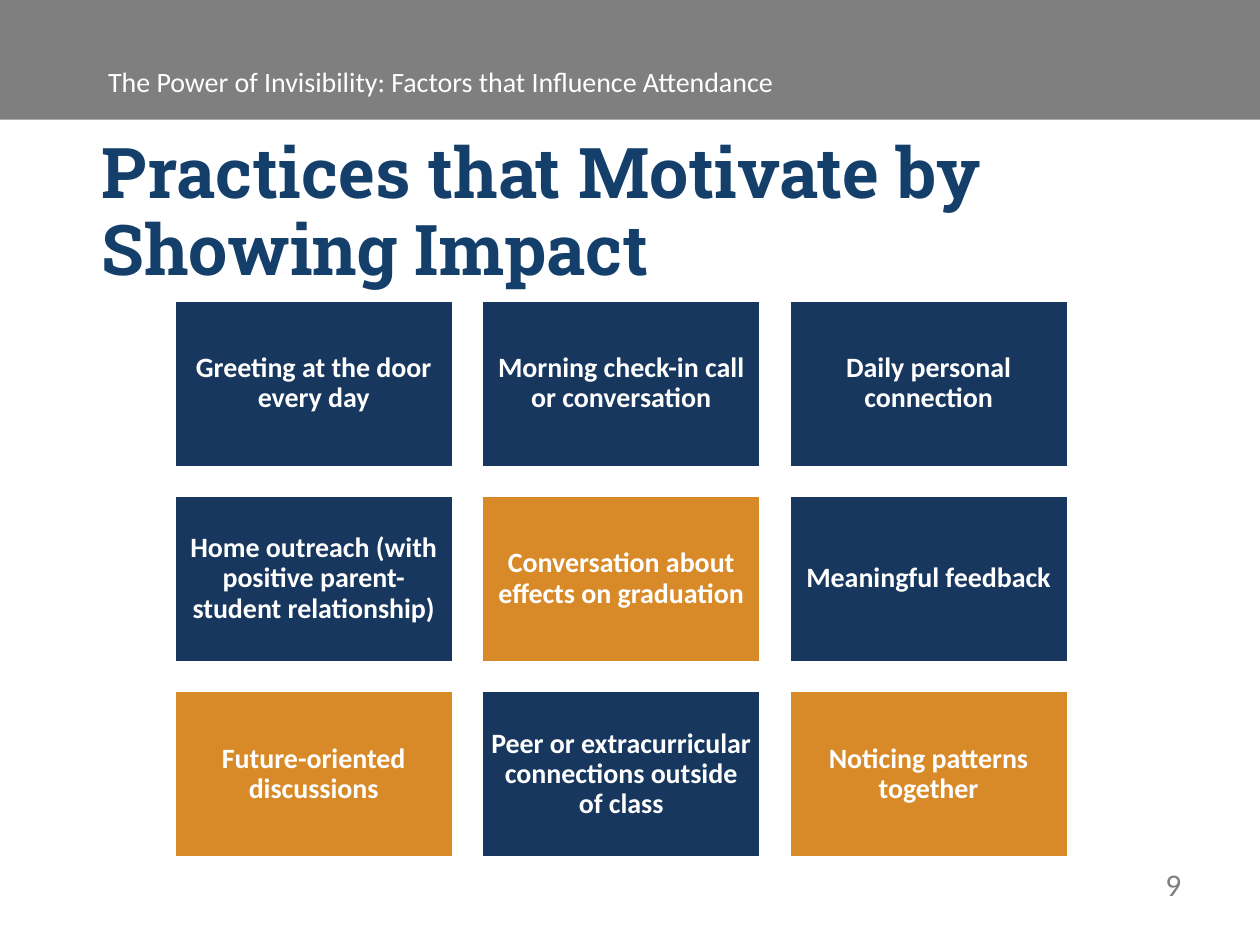
from pptx import Presentation
from pptx.dml.color import RGBColor
from pptx.enum.shapes import MSO_SHAPE
from pptx.enum.text import MSO_ANCHOR, PP_ALIGN
from pptx.util import Inches, Pt

RECTANGLE = MSO_SHAPE.RECTANGLE
MIDDLE = MSO_ANCHOR.MIDDLE
CENTER = PP_ALIGN.CENTER

NAVY, ORANGE, GREY, WHITE, TITLE_BLUE = "17375E", "D88A29", "7F7F7F", "FFFFFF", "143F6A"

PRACTICES = [
    ("Greeting at the door every day", NAVY),
    ("Morning check-in call or conversation", NAVY),
    ("Daily personal connection", NAVY),
    ("Home outreach (with positive parent-student relationship)", NAVY),
    ("Conversation about effects on graduation", ORANGE),
    ("Meaningful feedback", NAVY),
    ("Future-oriented discussions", ORANGE),
    ("Peer or extracurricular connections outside of class", NAVY),
    ("Noticing patterns together", ORANGE),
]
COLUMNS = 3
GRID_LEFT, GRID_TOP = 1.38, 2.38
TILE_WIDTH, TILE_HEIGHT = 2.22, 1.33
GAP = 0.22
TILE_INSET = 0.07


def color(hex_code):
    return RGBColor.from_string(hex_code)


class SlideBuilder:
    body_font = "Calibri"
    title_font = "Roboto Slab"

    def __init__(self, page):
        self.page = page

    def style(self, para, size, hex_code, font=None, bold=False):
        para.font.name = font or self.body_font
        para.font.size = Pt(size)
        para.font.bold = bold
        para.font.color.rgb = color(hex_code)

    def rectangle(self, left, top, width, height, fill):
        box = self.page.shapes.add_shape(
            RECTANGLE, Inches(left), Inches(top), Inches(width), Inches(height))
        box.shadow.inherit = False
        box.fill.solid()
        box.fill.fore_color.rgb = color(fill)
        box.line.fill.background()
        return box

    def tile(self, left, top, text, fill):
        box = self.rectangle(left, top, TILE_WIDTH, TILE_HEIGHT, fill)
        box.line.color.rgb = color(WHITE)
        box.line.width = Pt(2)
        frame = box.text_frame
        frame.word_wrap = True
        frame.vertical_anchor = MIDDLE
        frame.margin_left = frame.margin_right = Inches(TILE_INSET)
        frame.margin_top = frame.margin_bottom = Inches(TILE_INSET)
        para = frame.paragraphs[0]
        para.text = text
        para.alignment = CENTER
        para.line_spacing = 0.9
        self.style(para, 16, WHITE, bold=True)

    def text(self, left, top, width, height, text, size, hex_code,
             font=None, bold=False, line_spacing=None):
        box = self.page.shapes.add_textbox(
            Inches(left), Inches(top), Inches(width), Inches(height))
        box.text_frame.word_wrap = True
        para = box.text_frame.paragraphs[0]
        para.text = text
        para.line_spacing = line_spacing
        self.style(para, size, hex_code, font, bold)


def main():
    deck = Presentation()
    deck.slide_width, deck.slide_height = Inches(10), Inches(7.5)
    builder = SlideBuilder(deck.slides.add_slide(deck.slide_layouts[6]))

    builder.rectangle(0, -0.03, 10.01, 0.98, GREY)
    builder.text(0.76, 0.46, 8.39, 0.54,
                 "The Power of Invisibility: Factors that Influence Attendance", 16, WHITE)

    for index, (practice, fill) in enumerate(PRACTICES):
        row, column = divmod(index, COLUMNS)
        builder.tile(GRID_LEFT + column * (TILE_WIDTH + GAP),
                     GRID_TOP + row * (TILE_HEIGHT + GAP), practice, fill)

    builder.text(0.71, 1.03, 9.03, 0.96, "Practices that Motivate by Showing Impact",
                 40, TITLE_BLUE, builder.title_font, bold=True, line_spacing=Pt(44))
    builder.text(9.15, 6.82, 0.33, 0.4, "9", 18, GREY)

    deck.save("out.pptx")


if __name__ == "__main__":
    main()
